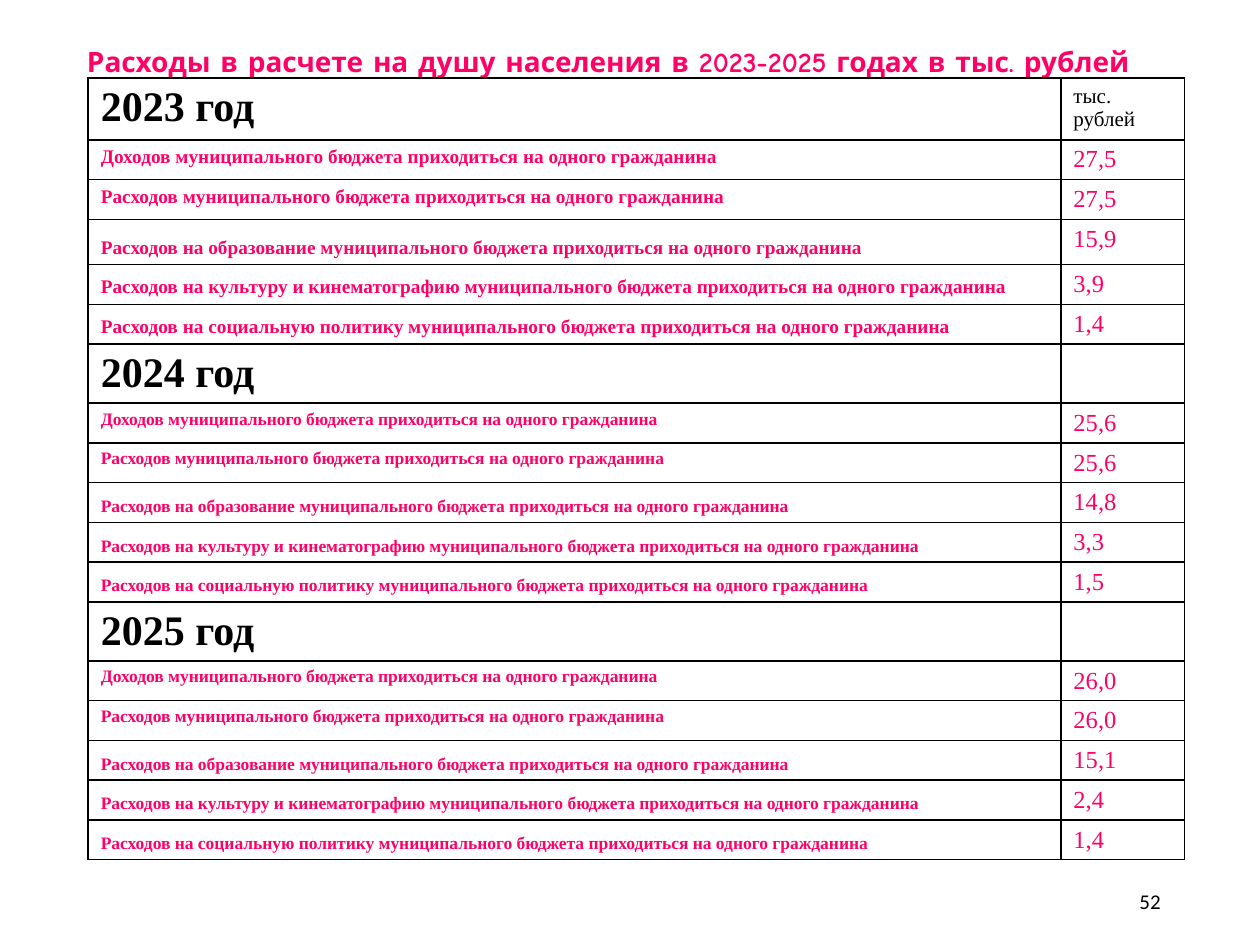
from lxml.etree import SubElement
from pptx import Presentation
from pptx.dml.color import RGBColor
from pptx.enum.text import MSO_ANCHOR as ANCHOR, MSO_AUTO_SIZE as AUTO, PP_ALIGN as ALIGN
from pptx.oxml.ns import qn
from pptx.util import Inches, Pt

PINK, BLACK = "FF0066", "000000"
SERIF = "Times New Roman"


def style(p, size, color, font=SERIF, bold=False):
    p.font.size = Pt(size)
    p.font.name = font
    p.font.bold = bold
    p.font.color.rgb = RGBColor.from_string(color)


def fill_cell(cell, text, size, color, bold=False, anchor=ANCHOR.TOP):
    cell.vertical_anchor = anchor
    tcPr = cell._tc.get_or_add_tcPr()
    for side in ("lnL", "lnR", "lnT", "lnB"):
        ln = SubElement(tcPr, qn(f"a:{side}"), w=str(Pt(1)))
        SubElement(SubElement(ln, qn("a:solidFill")), qn("a:srgbClr"), val=BLACK)
    cell.fill.background()
    p = cell.text_frame.paragraphs[0]
    p.text = text
    style(p, size, color, bold=bold)


prs = Presentation()
prs.slide_width, prs.slide_height = Inches(10), Inches(7.5)
s = prs.slides.add_slide(prs.slide_layouts[5])

title = s.shapes.title
title.left, title.top, title.width, title.height = (
    Inches(v) for v in (0.59, 0.3, 8.51, 0.4))
tf = title.text_frame
tf.auto_size = AUTO.NONE
tf.word_wrap = True
tf.vertical_anchor = ANCHOR.TOP
p = tf.paragraphs[0]
p.text = "Расходы в расчете на душу населения в 2023-2025 годах в тыс. рублей"
p.alignment = ALIGN.LEFT
style(p, 16, PINK, "Comic Neue", True)

indicators = [
    ("Доходов", ANCHOR.TOP),
    ("Расходов", ANCHOR.TOP),
    ("Расходов на образование", ANCHOR.BOTTOM),
    ("Расходов на культуру и кинематографию", ANCHOR.BOTTOM),
    ("Расходов на социальную политику", ANCHOR.BOTTOM),
]
years = [
    ("2023 год", "тыс. рублей", 11, ["27,5", "27,5", "15,9", "3,9", "1,4"]),
    ("2024 год", "", 10, ["25,6", "25,6", "14,8", "3,3", "1,5"]),
    ("2025 год", "", 10, ["26,0", "26,0", "15,1", "2,4", "1,4"]),
]

block = len(indicators) + 1
table = s.shapes.add_table(block * len(years), 2, Inches(0.7), Inches(0.62),
                           Inches(8.7), Inches(6.2)).table
table.first_row = table.horz_banding = False
table.columns[0].width, table.columns[1].width = Inches(7.72), Inches(0.98)
for row in table.rows:
    row.height = Inches(0.31)
for i, height in {0: 0.49, 3: 0.36, 6: 0.46, 12: 0.46}.items():
    table.rows[i].height = Inches(height)

for y, (year, unit, size, values) in enumerate(years):
    top = y * block
    fill_cell(table.cell(top, 0), year, 24, BLACK, True)
    fill_cell(table.cell(top, 1), unit, 12, BLACK)
    for i, ((name, anchor), value) in enumerate(zip(indicators, values), top + 1):
        text = f"{name} муниципального бюджета приходиться на одного гражданина"
        fill_cell(table.cell(i, 0), text, size, PINK, True, anchor)
        fill_cell(table.cell(i, 1), value, 14, PINK)

number = s.shapes.add_textbox(Inches(7.06), Inches(6.95), Inches(2.25), Inches(0.4))
tf = number.text_frame
tf.word_wrap = True
tf.vertical_anchor = ANCHOR.MIDDLE
p = tf.paragraphs[0]
p.text = "52"
p.alignment = ALIGN.RIGHT
style(p, 12, BLACK, "Calibri")

prs.save("out.pptx")
